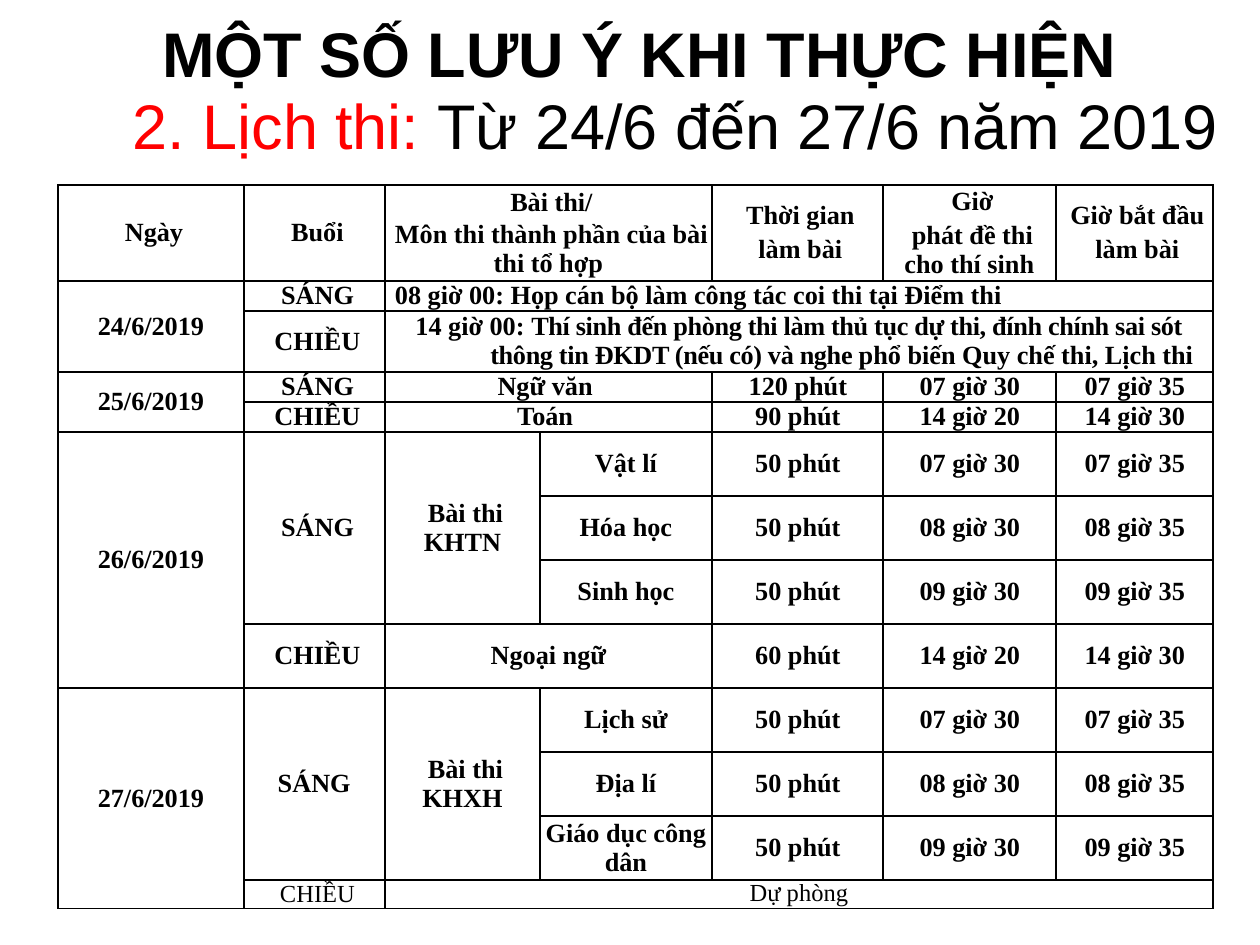
from lxml import etree
from pptx import Presentation, util as u
from pptx.dml import color
from pptx.enum import text
from pptx.oxml import ns

SCALE = 914400 / 126
INK = "000000"
RED = "FF0000"
SANS = "Arial"
SERIF = "Times New Roman"
COLS = [186, 141, 155, 172, 171, 173, 157]
ROWS = [96, 30, 61, 30, 30] + [64] * 7 + [29]
GAP = None
HEAD = [
    "Ngày",
    "Buổi",
    "Bài thi/\nMôn thi thành phần của bài thi tổ hợp",
    GAP,
    "Thời gian\nlàm bài",
    "Giờ\nphát đề thi cho thí sinh",
    "Giờ bắt đầu\nlàm bài",
]
MEET = "08 giờ 00: Họp cán bộ làm công tác coi thi tại Điểm thi"
BRIEF = [
    ("14 giờ 00: ", 0),
    ("Thí sinh đến phòng thi làm thủ tục dự thi, đính chính sai sót "
     "thông tin ĐKDT (nếu có) và nghe p", -20),
    ("hổ biến Quy chế thi, Lịch thi", 0),
]
DATA = [
    HEAD,
    ["24/6/2019", "SÁNG", MEET] + [GAP] * 4,
    [GAP, "CHIỀU", BRIEF] + [GAP] * 4,
    ["25/6/2019", "SÁNG", "Ngữ văn ", GAP, "120 phút", "07 giờ 30", "07 giờ 35"],
    [GAP, "CHIỀU", "Toán ", GAP, "90 phút", "14 giờ 20", "14 giờ 30"],
    ["26/6/2019", "SÁNG", "Bài thi KHTN", "Vật lí", "50 phút", "07 giờ 30", "07 giờ 35"],
    [GAP, GAP, GAP, "Hóa học", "50 phút", "08 giờ 30", "08 giờ 35"],
    [GAP, GAP, GAP, "Sinh học", "50 phút", "09 giờ 30", "09 giờ 35"],
    [GAP, "CHIỀU", "Ngoại ngữ", GAP, "60 phút", "14 giờ 20", "14 giờ 30"],
    ["27/6/2019", "SÁNG ", "Bài thi KHXH", "Lịch sử", "50 phút", "07 giờ 30", "07 giờ 35"],
    [GAP, GAP, GAP, "Địa lí", "50 phút", "08 giờ 30", "08 giờ 35"],
    [GAP, GAP, GAP, "Giáo dục công dân", "50 phút", "09 giờ 30", "09 giờ 35"],
    [GAP, "CHIỀU", "Dự phòng"] + [GAP] * 4,
]
SPANS = {
    (0, 2): (1, 2), (1, 0): (2, 1), (1, 2): (1, 5), (2, 2): (1, 5),
    (3, 0): (2, 1), (3, 2): (1, 2), (4, 2): (1, 2),
    (5, 0): (4, 1), (5, 1): (3, 1), (5, 2): (3, 1), (8, 2): (1, 2),
    (9, 0): (4, 1), (9, 1): (3, 1), (9, 2): (3, 1), (12, 2): (1, 5),
}


def px(n):
    return u.Emu(round(n * SCALE))


def rgb(code):
    return color.RGBColor.from_string(code)


def place(shape, box):
    shape.left, shape.top, shape.width, shape.height = map(px, box)


def add_run(para, words, size, face, hue=INK, bold=False, track=0):
    run = para.add_run()
    run.text = words
    font = run.font
    font.size, font.name, font.bold = u.Pt(size), face, bold
    font.color.rgb = rgb(hue)
    if track:
        run._r.get_or_add_rPr().set("spc", str(track))


def pad(para, align, before=0, after=0, left=0, first=0):
    para.alignment = align
    para.space_before, para.space_after = u.Pt(before), u.Pt(after)
    props = para._p.get_or_add_pPr()
    props.set("marL", str(px(left)))
    props.set("indent", str(px(first)))
    return props


def add_title(slide, box):
    shape = slide.shapes.title
    place(shape, box)
    frame = shape.text_frame
    frame.auto_size = text.MSO_AUTO_SIZE.NONE
    frame.vertical_anchor = text.MSO_ANCHOR.MIDDLE
    para = frame.paragraphs[0]
    para.line_spacing = 0.9
    pad(para, text.PP_ALIGN.CENTER)
    add_run(para, "MỘT SỐ LƯU Ý KHI THỰC HIỆN ", 36, SANS, bold=True)


def add_dates(slide, box):
    shape = slide.placeholders[1]
    place(shape, box)
    frame = shape.text_frame
    frame.auto_size = text.MSO_AUTO_SIZE.NONE
    para = frame.paragraphs[0]
    para.line_spacing = 0.9
    props = pad(para, text.PP_ALIGN.LEFT, 7.5, 24, 36)
    etree.SubElement(props, ns.qn("a:buNone"))
    add_run(para, "2. Lịch thi: ", 36, SANS, RED)
    add_run(para, "Từ 24/6 đến 27/6 năm 2019", 36, SANS)


def draw_edges(cell):
    props = cell._tc.get_or_add_tcPr()
    for i, side in enumerate(("lnL", "lnR", "lnT", "lnB")):
        line = etree.Element(ns.qn("a:" + side), w=str(u.Pt(1)))
        fill = etree.SubElement(line, ns.qn("a:solidFill"))
        etree.SubElement(fill, ns.qn("a:srgbClr"), val=INK)
        props.insert(i, line)


def layout(row, col):
    if row == 0:
        return (1, 1, 0, 6) if col < 4 else (3, 0, 0, 6)
    if DATA[row][col] is BRIEF:
        return 5, 5, 86, -86
    if col > 3:
        return 0, 0, 0, 1
    inset = col == 1 or DATA[row][col] == MEET or SPANS.get((row, col)) == (3, 1)
    return 5, 5, 0, 6 if inset else 0


def fill_cell(cell, row, col):
    words = DATA[row][col]
    last = row == len(DATA) - 1
    cell.vertical_anchor = (text.MSO_ANCHOR.TOP if last and col == 2
                            else text.MSO_ANCHOR.MIDDLE)
    align = text.PP_ALIGN.LEFT if words == MEET else text.PP_ALIGN.CENTER
    lines = [words] if words is BRIEF else [[(s, 0)] for s in words.split("\n")]
    frame = cell.text_frame
    for i, line in enumerate(lines):
        para = frame.add_paragraph() if i else frame.paragraphs[0]
        pad(para, align, *layout(row, col))
        for part, track in line:
            add_run(para, part, 14 if last else 15, SERIF, bold=not last, track=track)


def add_plan(slide, box):
    table = slide.shapes.add_table(len(ROWS), len(COLS), *map(px, box)).table
    table.first_row = table.horz_banding = False
    for col, wide in zip(table.columns, COLS):
        col.width = px(wide)
    for row, high in zip(table.rows, ROWS):
        row.height = px(high)
    for (r, c), (high, wide) in SPANS.items():
        table.cell(r, c).merge(table.cell(r + high - 1, c + wide - 1))
    for r, row in enumerate(DATA):
        for c, words in enumerate(row):
            cell = table.cell(r, c)
            cell.margin_left = cell.margin_right = px(4)
            cell.margin_top = cell.margin_bottom = 0
            cell.fill.background()
            draw_edges(cell)
            if words is not GAP:
                fill_cell(cell, r, c)


def main():
    deck = Presentation()
    deck.slide_width, deck.slide_height = px(1260), px(945)
    slide = deck.slides.add_slide(deck.slide_layouts[1])
    add_title(slide, (84, 21, 1129, 73))
    add_dates(slide, (84, 89, 1155, 73))
    add_plan(slide, (58, 185, sum(COLS), sum(ROWS)))
    deck.save("out.pptx")


if __name__ == "__main__":
    main()
